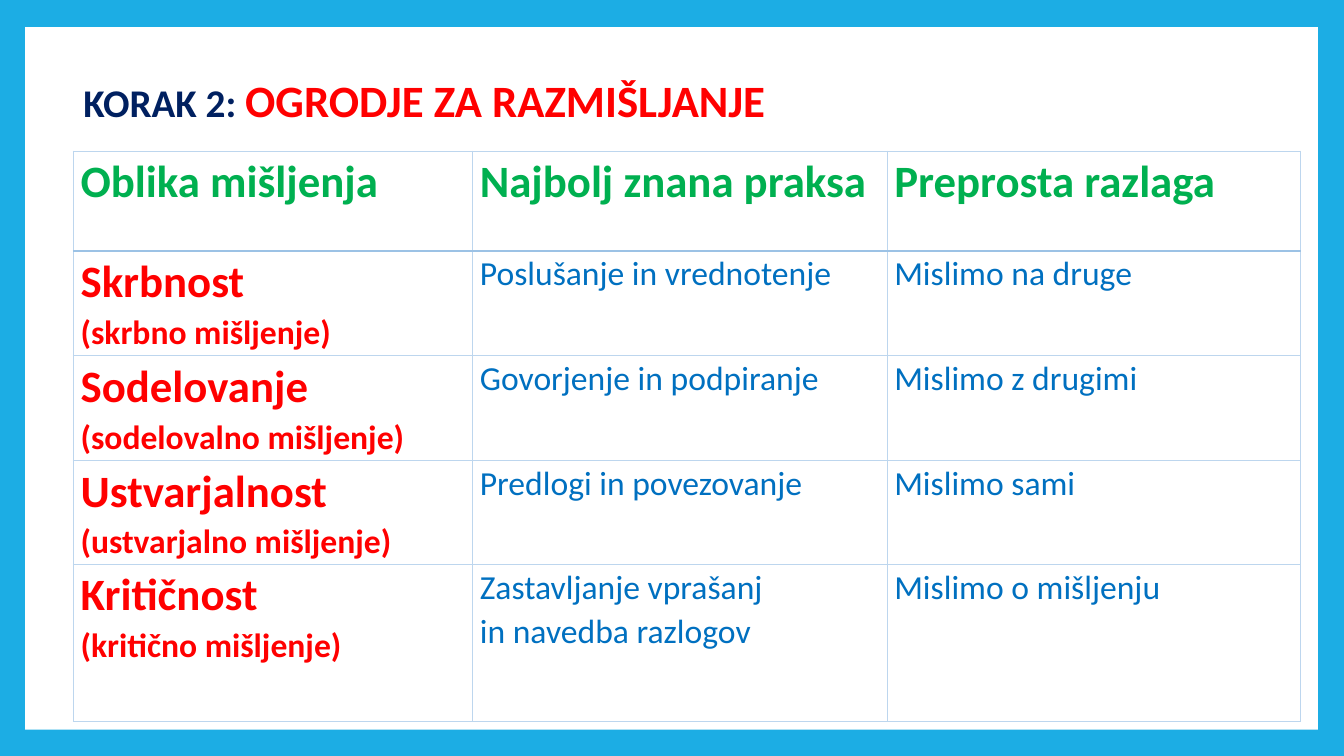
from dataclasses import dataclass

from lxml.etree import SubElement
from pptx import Presentation
from pptx.dml.color import RGBColor
from pptx.enum.shapes import MSO_SHAPE
from pptx.enum.text import MSO_ANCHOR
from pptx.oxml.ns import qn
from pptx.util import Emu, Pt


@dataclass(frozen=True)
class Theme:
    font: str = "Calibri"
    frame: str = "1CADE4"
    panel: str = "FFFFFF"
    step: str = "002060"
    accent: str = "FF0000"
    heading: str = "00B050"
    body: str = "0070C0"
    grid: str = "BDD6EE"
    header_rule: str = "9CC2E5"
    large: int = 32
    medium: int = 28
    small: int = 24


theme = Theme()
SCALE = 9144


def add_run(paragraph, text, size, color, bold):
    run = paragraph.add_run()
    run.text = text
    run.font.name = theme.font
    run.font.size = Pt(size)
    run.font.bold = bold
    run.font.color.rgb = RGBColor.from_string(color)


def add_border(cell, side, color, width):
    line = SubElement(cell._tc.get_or_add_tcPr(), qn(f"a:{side}"), w=str(Pt(width)))
    fill = SubElement(line, qn("a:solidFill"))
    SubElement(fill, qn("a:srgbClr"), val=color)


presentation = Presentation()
presentation.slide_width = Emu(1333 * SCALE)
presentation.slide_height = Emu(750 * SCALE)
slide = presentation.slides.add_slide(presentation.slide_layouts[6])
slide.background.fill.solid()
slide.background.fill.fore_color.rgb = RGBColor.from_string(theme.frame)

panel = slide.shapes.add_shape(
    MSO_SHAPE.RECTANGLE, *[Emu(length * SCALE) for length in (25, 27, 1282, 697)]
)
panel.shadow.inherit = False
panel.fill.solid()
panel.fill.fore_color.rgb = RGBColor.from_string(theme.panel)
panel.line.fill.background()

title = slide.shapes.add_textbox(*[Emu(length * SCALE) for length in (73, 55, 1197, 95)])
title.text_frame.word_wrap = True
title.text_frame.vertical_anchor = MSO_ANCHOR.MIDDLE
paragraph = title.text_frame.paragraphs[0]
paragraph.line_spacing = 0.9
add_run(paragraph, "KORAK 2: ", theme.medium, theme.step, True)
add_run(paragraph, "OGRODJE ZA RAZMIŠLJANJE", theme.large, theme.accent, True)

rows = [
    (["Oblika mišljenja"], ["Najbolj znana praksa"], ["Preprosta razlaga"]),
    (["Skrbnost", "(skrbno mišljenje)"], ["Poslušanje in vrednotenje"], ["Mislimo na druge"]),
    (["Sodelovanje", "(sodelovalno mišljenje)"], ["Govorjenje in podpiranje"], ["Mislimo z drugimi"]),
    (["Ustvarjalnost", "(ustvarjalno mišljenje)"], ["Predlogi in povezovanje"], ["Mislimo sami"]),
    (
        ["Kritičnost", "(kritično mišljenje)"],
        ["Zastavljanje vprašanj", "in navedba razlogov"],
        ["Mislimo o mišljenju"],
    ),
]
column_widths = [396, 411, 410]
row_heights = [99, 104, 104, 103, 156]

table = slide.shapes.add_table(
    len(rows), len(column_widths), Emu(73 * SCALE), Emu(150 * SCALE),
    Emu(sum(column_widths) * SCALE), Emu(sum(row_heights) * SCALE),
).table
table.first_row = False
table.horz_banding = False
for column, width in zip(table.columns, column_widths):
    column.width = Emu(width * SCALE)
for row, height in zip(table.rows, row_heights):
    row.height = Emu(height * SCALE)

for row_index, row in enumerate(rows):
    for column_index, lines in enumerate(row):
        cell = table.cell(row_index, column_index)
        cell.margin_left = cell.margin_right = Emu(7 * SCALE)
        cell.margin_top = cell.margin_bottom = 0
        header_side = {0: "lnB", 1: "lnT"}.get(row_index)
        for side in ("lnL", "lnR", "lnT", "lnB"):
            if side == header_side:
                add_border(cell, side, theme.header_rule, 1.5)
            else:
                add_border(cell, side, theme.grid, 1)
        cell.fill.background()
        for line_index, text in enumerate(lines):
            if line_index:
                paragraph = cell.text_frame.add_paragraph()
            else:
                paragraph = cell.text_frame.paragraphs[0]
            paragraph.line_spacing = 1.07
            if row_index == 0:
                add_run(paragraph, text, theme.large, theme.heading, True)
            elif column_index == 0:
                size = theme.small if line_index else theme.large
                add_run(paragraph, text, size, theme.accent, True)
            else:
                add_run(paragraph, text, theme.small, theme.body, False)

presentation.save("out.pptx")
